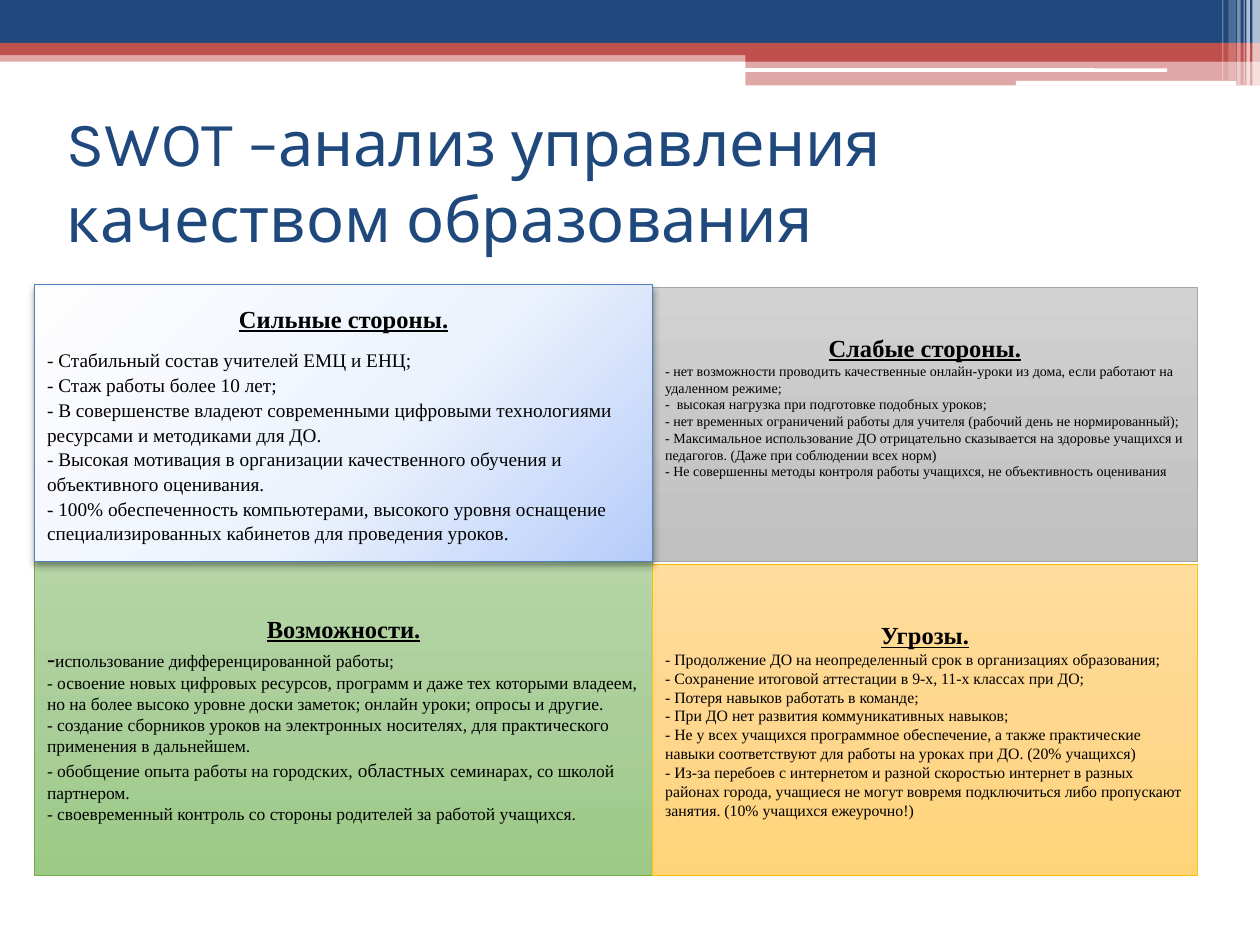
"""Build the SWOT slide on managing the quality of education."""
from lxml.etree import SubElement
from pptx import Presentation
from pptx.dml.color import RGBColor
from pptx.enum.shapes import MSO_SHAPE as Shape
from pptx.enum.text import MSO_ANCHOR as Anchor, MSO_AUTO_SIZE as AutoSize, PP_ALIGN as Align
from pptx.oxml import parse_xml
from pptx.oxml.ns import nsdecls, qn
from pptx.util import Pt

COLORS = {"navy": "1F497D", "red": "C0504D", "white": "FFFFFF", "black": "000000",
          "gray": "A5A5A5", "green": "70AD47", "gold": "FFC000", "blue": "4F81BD"}
BODY_FONT = "Times New Roman"
HEADING_SIZE = 14
TITLE = "SWOT –анализ управления качеством образования"

# left, top, width, height, color, opacity in percent, shape
BANDS = [
    (0, 28.8, 720, 6.5, "red", 50, Shape.RECTANGLE),
    (0, 0, 720, 24.5, "navy", 100, Shape.RECTANGLE),
    (0, 24.5, 720, 7, "red", 100, Shape.RECTANGLE),
    (426, 28, 294, 7.2, "red", 100, Shape.RECTANGLE),
    (426, 34.8, 294, 14, "red", 50, Shape.RECTANGLE),
    (425.5, 39, 241.5, 2, "white", 100, Shape.ROUNDED_RECTANGLE),
    (580.5, 46.2, 126, 2.7, "white", 100, Shape.ROUNDED_RECTANGLE),
]
# left, width, height, opacity in percent
STRIPES = [(715.7, 4.3, 49, 65), (712.2, 2, 49, 65), (710.6, 0.7, 49, 60),
           (707, 2, 49, 40), (702, 4.3, 46, 20), (698.4, 0.7, 46, 30)]

LINEAR = '<a:lin ang="5400000" scaled="0"/>'
RADIAL = ('<a:path path="circle"><a:fillToRect l="-40000" t="-90000" '
          'r="140000" b="190000"/></a:path>')

QUADRANTS = [
    {"heading": "Слабые стороны.", "box": (373, 164, 311, 157), "size": 8, "bottom": 24.3,
     "line": ("gray", 0.5), "stops": [(0, "D2D2D2"), (50, "C8C8C8"), (100, "C0C0C0")],
     "items": [
         "- нет возможности проводить качественные онлайн-уроки из дома, если работают на удаленном режиме;",
         "-  высокая нагрузка при подготовке подобных уроков;",
         "- нет временных ограничений работы для учителя (рабочий день не нормированный);",
         "- Максимальное использование ДО отрицательно сказывается на здоровье учащихся и педагогов. (Даже при соблюдении всех норм)",
         "- Не совершенны методы контроля работы учащихся, не объективность оценивания"]},
    {"heading": "Возможности.", "box": (19.8, 321, 353.2, 179.3), "size": 10,
     "line": ("green", 0.5), "stops": [(0, "B5D5A7"), (50, "AACE99"), (100, "9CCA86")],
     "items": [
         [("-", 14), ("использование дифференцированной работы;", 10)],
         "- освоение новых цифровых ресурсов, программ и даже тех которыми владеем, но на более высоко уровне доски заметок; онлайн уроки; опросы и другие.",
         "- создание сборников уроков на электронных носителях, для практического применения в дальнейшем.",
         [("- обобщение опыта работы на городских,", 10), (" ", 12), ("областных ", 11),
          ("семинарах, со школой партнером.", 10)],
         "- своевременный контроль со стороны родителей за работой учащихся."]},
    {"heading": "Угрозы.", "box": (373, 322.5, 311, 177.8), "size": 9,
     "line": ("gold", 0.5), "stops": [(0, "FFDD9C"), (50, "FFD78E"), (100, "FFD479")],
     "items": [
         "- Продолжение ДО на неопределенный срок в организациях образования;",
         "- Сохранение итоговой аттестации в 9-х, 11-х классах при ДО;",
         "- Потеря навыков работать в команде;",
         "- При ДО нет развития коммуникативных навыков;",
         "- Не у всех учащихся программное обеспечение, а также практические навыки соответствуют для работы на уроках при ДО. (20% учащихся)",
         "- Из-за перебоев с интернетом и разной скоростью интернет в разных районах города, учащиеся не могут вовремя подключиться либо пропускают занятия. (10% учащихся ежеурочно!)"]},
    {"heading": "Сильные стороны.", "box": (19.8, 162.7, 353.2, 158.3), "size": 11,
     "line": ("blue", 0.75), "stops": [(0, "FEFEFF"), (55, "EDF3FD"), (100, "B5CCF9")],
     "direction": RADIAL, "shadow": True, "spacing": 1.07, "after": 8,
     "items": [
         "- Стабильный состав учителей ЕМЦ и ЕНЦ;",
         "- Стаж работы более 10 лет;",
         "- В совершенстве владеют современными цифровыми технологиями ресурсами и методиками для ДО.",
         "- Высокая мотивация в организации качественного обучения и объективного оценивания.",
         "- 100% обеспеченность компьютерами, высокого уровня оснащение специализированных кабинетов для проведения уроков."]},
]


def rgb(name):
    return RGBColor.from_string(COLORS[name])


def add_band(slide, left, top, width, height, color, opacity, kind=Shape.RECTANGLE):
    shape = slide.shapes.add_shape(kind, Pt(left), Pt(top), Pt(width), Pt(height))
    shape.shadow.inherit = False
    shape.line.fill.background()
    shape.fill.solid()
    shape.fill.fore_color.rgb = rgb(color)
    if opacity < 100:
        color_element = shape._element.spPr.find(".//" + qn("a:srgbClr"))
        SubElement(color_element, qn("a:alpha"), val=str(opacity * 1000))


def set_gradient(shape, stops, direction):
    shape.fill.gradient()
    properties = shape._element.spPr
    stop_xml = "".join(f'<a:gs pos="{position * 1000}"><a:srgbClr val="{color}"/></a:gs>'
                       for position, color in stops)
    properties.replace(properties.find(qn("a:gradFill")), parse_xml(
        f'<a:gradFill {nsdecls("a")} rotWithShape="1"><a:gsLst>{stop_xml}</a:gsLst>'
        f'{direction}</a:gradFill>'))


def add_shadow(shape):
    shape._element.spPr.find(qn("a:effectLst")).append(parse_xml(
        f'<a:outerShdw {nsdecls("a")} blurRad="{Pt(4.1)}" dist="{Pt(2)}" dir="5400000" '
        f'rotWithShape="0"><a:srgbClr val="{COLORS["black"]}"><a:alpha val="40000"/>'
        '</a:srgbClr></a:outerShdw>'))


def style_paragraph(paragraph, size, align, spacing):
    paragraph.alignment = align
    paragraph.line_spacing = spacing
    paragraph.font.name = BODY_FONT
    paragraph.font.size = Pt(size)
    paragraph.font.color.rgb = rgb("black")


def add_quadrant(slide, quadrant):
    shape = slide.shapes.add_shape(Shape.RECTANGLE, *map(Pt, quadrant["box"]))
    shape.shadow.inherit = False
    set_gradient(shape, quadrant["stops"], quadrant.get("direction", LINEAR))
    line_color, line_width = quadrant["line"]
    shape.line.color.rgb = rgb(line_color)
    shape.line.width = Pt(line_width)
    if quadrant.get("shadow"):
        add_shadow(shape)

    frame = shape.text_frame
    frame.word_wrap = True
    frame.vertical_anchor = Anchor.MIDDLE
    frame.margin_bottom = Pt(quadrant.get("bottom", 3.6))
    spacing = quadrant.get("spacing", 1.0)
    heading = frame.paragraphs[0]
    heading.text = quadrant["heading"]
    style_paragraph(heading, HEADING_SIZE, Align.CENTER, spacing)
    heading.space_after = Pt(quadrant.get("after", 0))
    heading.font.bold = True
    heading.font.underline = True
    for item in quadrant["items"]:
        paragraph = frame.add_paragraph()
        style_paragraph(paragraph, quadrant["size"], Align.LEFT, spacing)
        if isinstance(item, str):
            paragraph.text = item
            continue
        for text, size in item:
            run = paragraph.add_run()
            run.text = text
            run.font.size = Pt(size)


def add_title(slide):
    title = slide.shapes.title
    title.left, title.top, title.width, title.height = map(Pt, (31, 60.5, 648, 84.2))
    frame = title.text_frame
    frame.text = TITLE
    frame.word_wrap = True
    frame.auto_size = AutoSize.NONE
    frame.vertical_anchor = Anchor.MIDDLE
    paragraph = frame.paragraphs[0]
    paragraph.alignment = Align.LEFT
    paragraph.font.name = "Karla"
    paragraph.font.size = Pt(36)
    paragraph.font.color.rgb = rgb("navy")


def main():
    presentation = Presentation()
    presentation.slide_width, presentation.slide_height = Pt(720), Pt(540)
    slide = presentation.slides.add_slide(presentation.slide_layouts[5])
    for band in BANDS:
        add_band(slide, *band)
    for left, width, height, opacity in STRIPES:
        add_band(slide, left, 0, width, height, "white", opacity)
    add_title(slide)
    for quadrant in QUADRANTS:
        add_quadrant(slide, quadrant)
    presentation.save("out.pptx")


if __name__ == "__main__":
    main()
